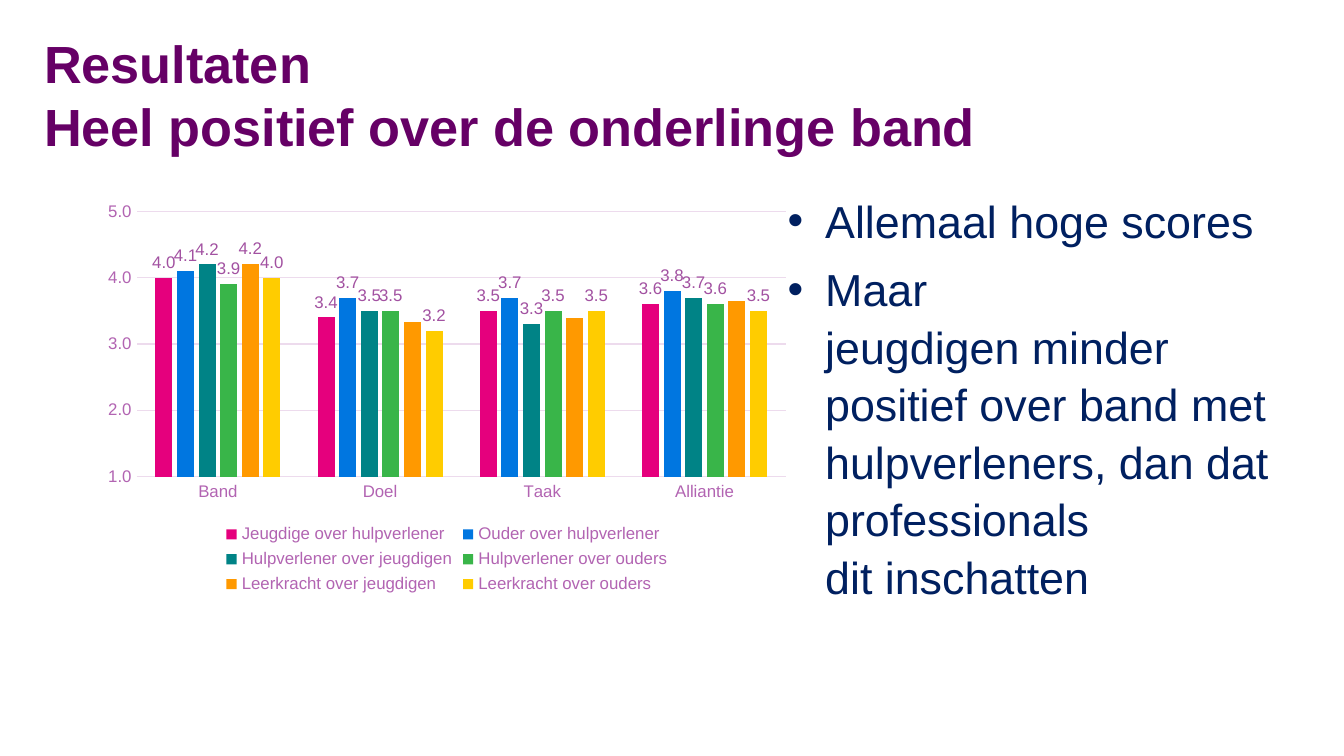
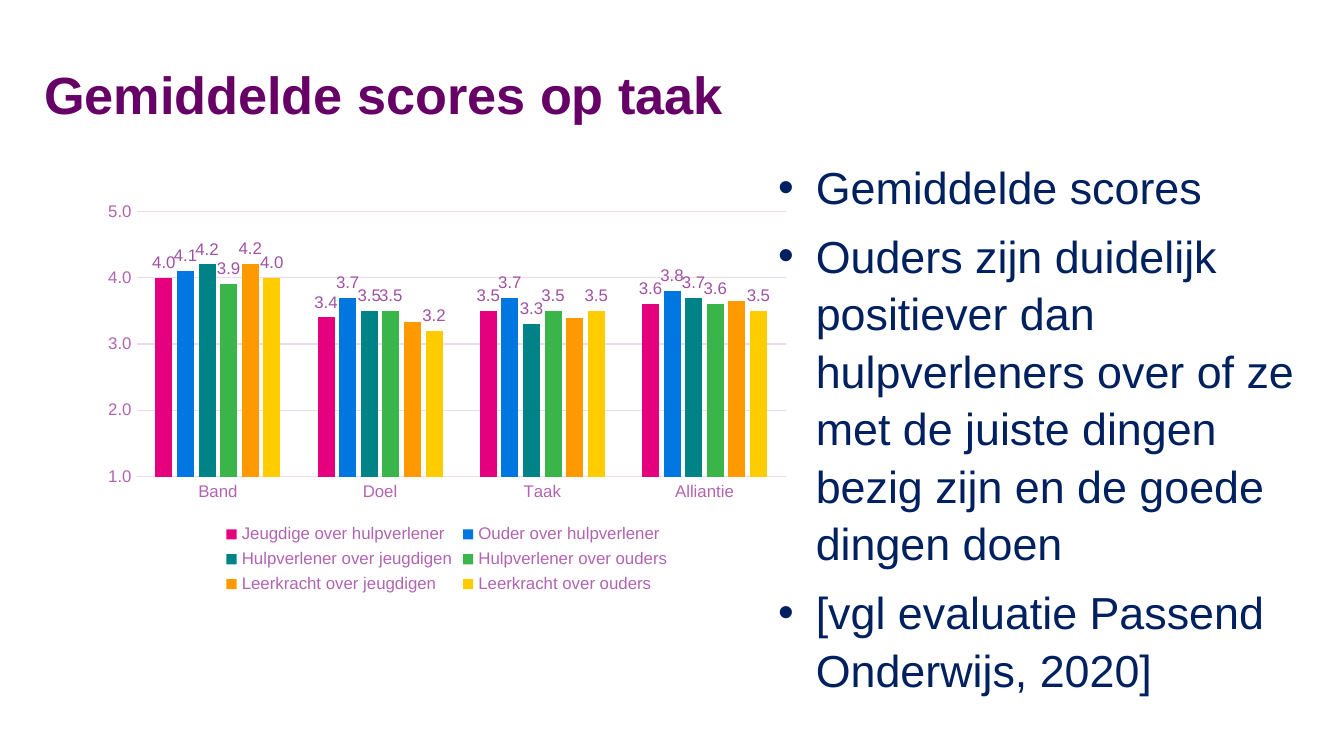
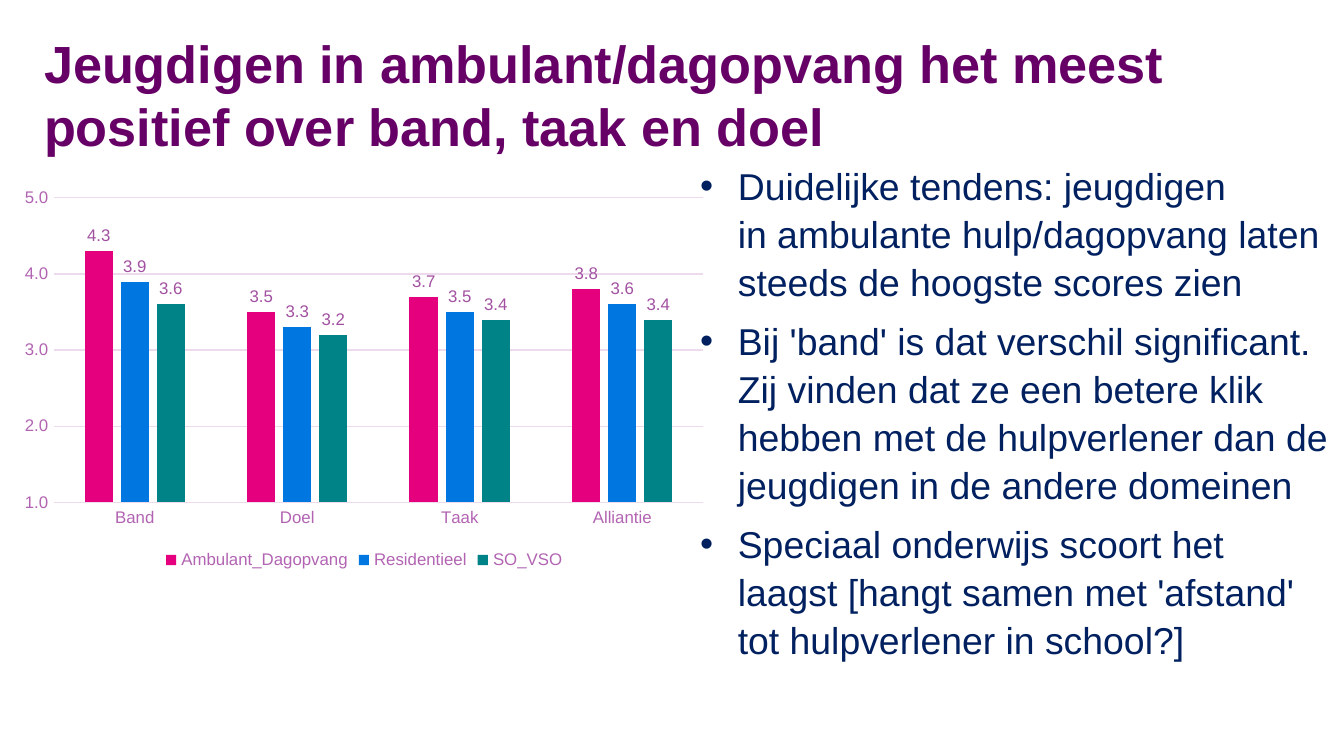
from pptx import Presentation
from pptx.chart.data import CategoryChartData
from pptx.dml.color import RGBColor
from pptx.enum.chart import XL_CHART_TYPE, XL_LABEL_POSITION, XL_LEGEND_POSITION, XL_TICK_MARK
from pptx.enum.text import MSO_ANCHOR, MSO_AUTO_SIZE
from pptx.oxml.ns import qn
from pptx.util import Pt
from lxml import etree

PX = 4572  # 200 px to the inch
FONT = "Arial"
NUMBER = "#,##0.0"
HARD = chr(160)  # no-break space, typed as ~ below

PURPLE = RGBColor(0x66, 0x00, 0x66)
NAVY = RGBColor(0x00, 0x20, 0x60)
PLUM = RGBColor(0x66, 0x33, 0x66)
MAUVE = RGBColor(0xB2, 0x64, 0xB2)
VIOLET = RGBColor(0xA2, 0x51, 0xA1)
PALE = RGBColor(0xED, 0xDB, 0xED)
PINK = RGBColor(0xE5, 0x00, 0x7D)
BLUE = RGBColor(0x00, 0x76, 0xE0)
TEAL = RGBColor(0x00, 0x83, 0x86)
GREEN = RGBColor(0x39, 0xB5, 0x49)
ORANGE = RGBColor(0xFF, 0x99, 0x00)
YELLOW = RGBColor(0xFF, 0xCC, 0x00)
COLORS = [PINK, BLUE, TEAL, GREEN, ORANGE, YELLOW]


def style(font, size, color, bold=False):
    font.name = FONT
    font.size = Pt(size)
    font.bold = bold
    font.color.rgb = color


def write(slide, lines, box, size, color, bold=False, bullet=False,
          pad=(20, 10), anchor=MSO_ANCHOR.TOP, fit=MSO_AUTO_SIZE.NONE):
    shape = slide.shapes.add_textbox(*[n * PX for n in box])
    frame = shape.text_frame
    frame.word_wrap = True
    frame.auto_size = fit
    frame.vertical_anchor = anchor
    frame.margin_left = frame.margin_right = pad[0] * PX
    frame.margin_top = frame.margin_bottom = pad[1] * PX
    for i, line in enumerate(lines):
        para = frame.paragraphs[0] if i == 0 else frame.add_paragraph()
        para.text = line.replace("~", HARD)
        if bullet:
            props = para._p.get_or_add_pPr()
            props.set("marL", str(56 * PX))
            props.set("indent", str(-56 * PX))
            etree.SubElement(props, qn("a:buFont")).set("typeface", FONT)
            etree.SubElement(props, qn("a:buChar")).set("char", "•")
            para.line_spacing = 1.07
            para.space_after = Pt(6)
        for run in para.runs:
            style(run.font, size, color, bold)


# Scores per group on Band, Doel, Taak, Alliantie
CATS = ["Band", "Doel", "Taak", "Alliantie"]
PAIRS = {
    "Jeugdige over hulpverlener": (4.0, 3.4, 3.5, 3.6),
    "Ouder over hulpverlener": (4.1, 3.7, 3.7, 3.8),
    "Hulpverlener over jeugdigen": (4.2, 3.5, 3.3, 3.7),
    "Hulpverlener over ouders": (3.9, 3.5, 3.5, 3.6),
    "Leerkracht over jeugdigen": (4.203, 3.332, 3.386, 3.641),
    "Leerkracht over ouders": (4.0, 3.2, 3.5, 3.5),
}
CARE = {
    "Ambulant_Dagopvang": (4.3, 3.5, 3.7, 3.8),
    "Residentieel": (3.9, 3.3, 3.5, 3.6),
    "SO_VSO": (3.6, 3.2, 3.4, 3.4),
}
FIRST = {"Leerkracht over jeugdigen"}  # only the first bar has a label

# Title, scores, chart box, bullets, bullet box, bullet size
PAGES = [
    ("Resultaten\nHeel positief over de onderlinge band",
     PAIRS, (140, 288, 1050, 604),
     ["Allemaal hoge scores",
      "Maar jeugdigen~minder positief over band~met hulpverleners, "
      "dan dat professionals dit~inschatten"],
     (1158, 274, 746, 610), 24),
    ("Gemiddelde scores op taak~",
     PAIRS, (140, 288, 1050, 604),
     ["Gemiddelde scores",
      "Ouders zijn duidelijk positiever dan hulpverleners over of ze "
      "met de juiste dingen bezig zijn en de goede dingen doen",
      "[vgl evaluatie Passend Onderwijs, 2020]"],
     (1144, 224, 856, 1030), 24),
    ("Jeugdigen in ambulant/dagopvang het meest positief over band, taak en doel",
     CARE, (16, 268, 1052, 588),
     ["Duidelijke tendens: jeugdigen in~ambulante hulp/dagopvang laten "
      "steeds de hoogste scores zien",
      "Bij 'band' is dat verschil significant. Zij vinden dat ze een betere "
      "klik hebben met de hulpverlener dan de jeugdigen in de andere domeinen",
      "Speciaal onderwijs scoort het laagst [hangt samen met 'afstand' "
      "tot hulpverlener in school?]"],
     (1028, 230, 972, 766), 20),
]

deck = Presentation()
deck.slide_width = 2000 * PX
deck.slide_height = 1125 * PX

for title, scores, area, points, box, size in PAGES:
    slide = deck.slides.add_slide(deck.slide_layouts[6])
    write(slide, [title], (46, 46, 1908, 188), 28, PURPLE, bold=True,
          anchor=MSO_ANCHOR.MIDDLE)

    # Column chart
    data = CategoryChartData(number_format=NUMBER)
    data.categories = CATS
    for name, values in scores.items():
        data.add_series(name, values)
    chart = slide.shapes.add_chart(XL_CHART_TYPE.COLUMN_CLUSTERED,
                                   *[n * PX for n in area], data).chart
    chart.has_title = False
    style(chart.font, 10, PLUM)
    chart.has_legend = True
    chart.legend.position = XL_LEGEND_POSITION.BOTTOM
    chart.legend.include_in_layout = False
    style(chart.legend.font, 9, MAUVE)

    # Axes
    for axis in (chart.category_axis, chart.value_axis):
        axis.major_tick_mark = axis.minor_tick_mark = XL_TICK_MARK.NONE
        style(axis.tick_labels.font, 9, MAUVE)
    scale = chart.value_axis
    scale.minimum_scale, scale.maximum_scale, scale.major_unit = 1, 5, 1
    scale.tick_labels.number_format = NUMBER
    scale.tick_labels.number_format_is_linked = False
    scale.format.line.fill.background()
    scale.has_major_gridlines = True
    for line in (chart.category_axis.format.line, scale.major_gridlines.format.line):
        line.color.rgb = PALE
        line.width = Pt(0.75)

    # Bars and their labels
    plot = chart.plots[0]
    plot.vary_by_categories = False
    plot.gap_width = 219
    plot.overlap = -27
    for bars, color in zip(plot.series, COLORS):
        bars.format.fill.solid()
        bars.format.fill.fore_color.rgb = color
        bars.invert_if_negative = False
        labels = bars.data_labels
        labels.number_format = NUMBER
        labels.number_format_is_linked = False
        labels.show_value = bars.name not in FIRST
        label = labels if labels.show_value else bars.points[0].data_label
        style(label.font, 9, VIOLET)
        label.position = XL_LABEL_POSITION.OUTSIDE_END

    write(slide, points, box, size, NAVY, bullet=True, pad=(14, 8),
          fit=MSO_AUTO_SIZE.SHAPE_TO_FIT_TEXT)

deck.save("out.pptx")
